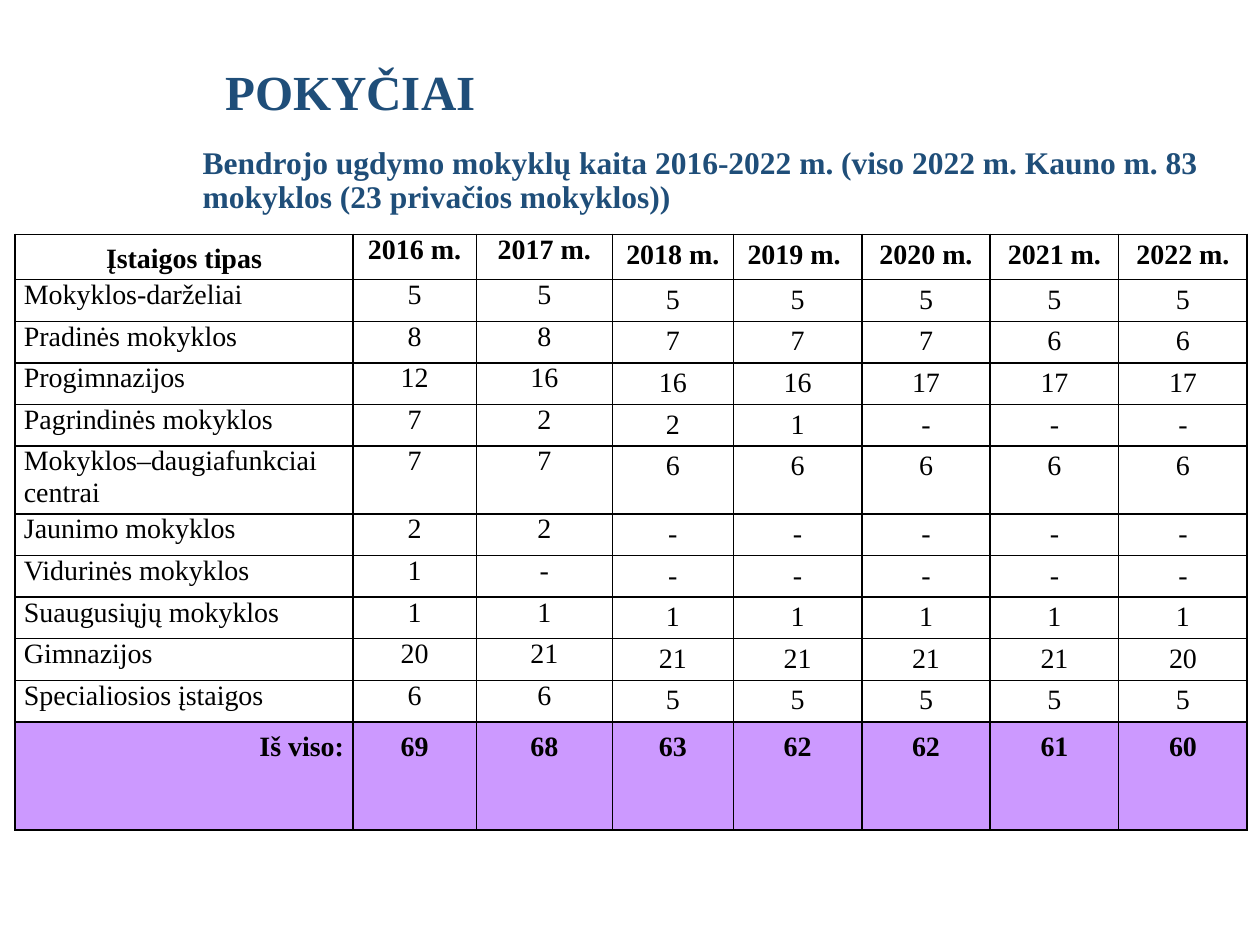
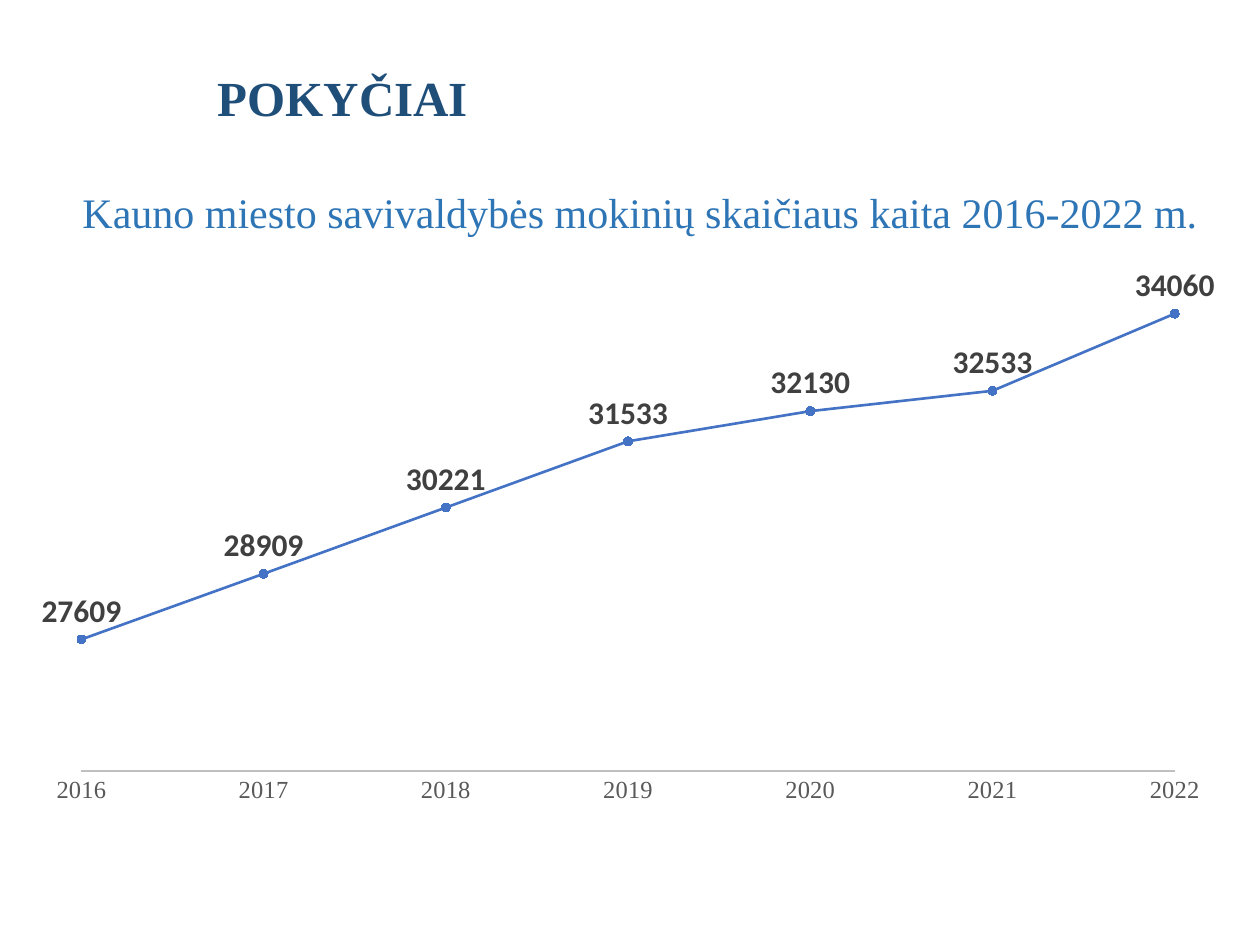
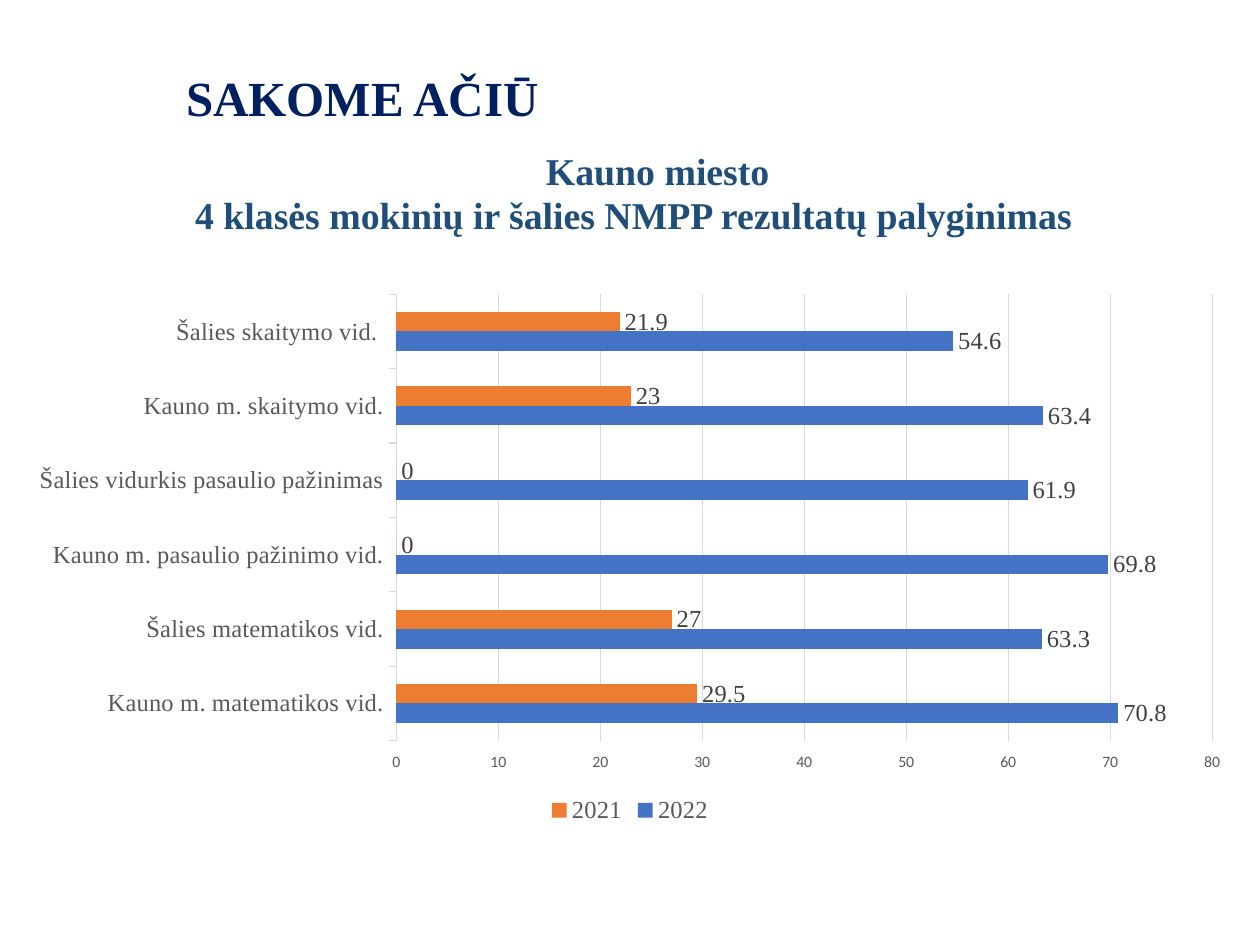
from lxml import etree
from pptx import Presentation
from pptx.chart.data import CategoryChartData, XyChartData
from pptx.chart.datalabel import DataLabels
from pptx.dml.color import RGBColor
from pptx.enum.chart import (XL_CHART_TYPE, XL_LABEL_POSITION, XL_LEGEND_POSITION,
                             XL_MARKER_STYLE, XL_TICK_MARK)
from pptx.enum.text import MSO_ANCHOR, PP_ALIGN
from pptx.oxml import parse_xml
from pptx.oxml.ns import nsdecls, qn
from pptx.util import Inches, Pt

LEFT, CENTER, RIGHT = PP_ALIGN.LEFT, PP_ALIGN.CENTER, PP_ALIGN.RIGHT
TOP, MIDDLE = MSO_ANCHOR.TOP, MSO_ANCHOR.MIDDLE
NO_TICK, TICK_OUT = XL_TICK_MARK.NONE, XL_TICK_MARK.OUTSIDE
ABOVE, OUTSIDE_END = XL_LABEL_POSITION.ABOVE, XL_LABEL_POSITION.OUTSIDE_END

# Shared look
SERIF, SANS = "Times New Roman", "Calibri"
NAVY, DEEP, SKY = "1F4E79", "002060", "2E75B6"
BLACK, DARK, GREY, SILVER, PALE = "000000", "404040", "595959", "BFBFBF", "D9D9D9"
BLUE, ORANGE, LILAC = "4472C4", "ED7D31", "CC99FF"
HEADING = {"name": SERIF, "size": Pt(28), "bold": True, "color": NAVY}
AXIS = {"name": SERIF, "size": Pt(14), "color": GREY}
rgb = RGBColor.from_string


def style(font, fmt):
    for key, value in fmt.items():
        if key == "color":
            font.color.rgb = rgb(value)
        else:
            setattr(font, key, value)


def add_text(s, lines, box, fmt, align=LEFT, anchor=TOP, spacing=1.0):
    tf = s.shapes.add_textbox(*[Inches(v) for v in box]).text_frame
    tf.word_wrap = True
    tf.vertical_anchor = anchor
    for i, line in enumerate(lines):
        p = tf.paragraphs[0] if i == 0 else tf.add_paragraph()
        p.alignment = align
        p.line_spacing = spacing
        r = p.add_run()
        r.text = line
        style(r.font, fmt)
    return tf


prs = Presentation()
prs.slide_width, prs.slide_height = Inches(10), Inches(7.5)
blank = prs.slide_layouts[6]

# Slide 1: table of schools
s = prs.slides.add_slide(blank)
add_text(s, ["Bendrojo ugdymo mokyklų kaita 2016-2022 m. (viso 2022 m. Kauno m. 83 "
             "mokyklos (23 privačios mokyklos))"],
         (1.51, 1.08, 8.35, 0.71), HEADING | {"size": Pt(18)}, anchor=MIDDLE, spacing=0.9)
add_text(s, ["POKYČIAI"], (1.69, 0.44, 4.02, 0.57), HEADING)

rows = [
    ["Įstaigos tipas", "2016 m.", "2017 m.", "2018 m.", "2019 m. ", "2020 m.", "2021 m.", "2022 m."],
    ["Mokyklos-darželiai", 5, 5, 5, 5, 5, 5, 5],
    ["Pradinės mokyklos", 8, 8, 7, 7, 7, 6, 6],
    ["Progimnazijos", 12, 16, 16, 16, 17, 17, 17],
    ["Pagrindinės mokyklos", 7, 2, 2, 1, "-", "-", "-"],
    ["Mokyklos–daugiafunkciai centrai", 7, 7, 6, 6, 6, 6, 6],
    ["Jaunimo mokyklos", 2, 2, "-", "-", "-", "-", "-"],
    ["Vidurinės mokyklos", 1, "-", "-", "-", "-", "-", "-"],
    ["Suaugusiųjų mokyklos", 1, 1, 1, 1, 1, 1, 1],
    ["Gimnazijos", 20, 21, 21, 21, 21, 21, 20],
    ["Specialiosios įstaigos", 6, 6, 5, 5, 5, 5, 5],
    ["Iš viso:", 69, 68, 63, 62, 62, 61, 60],
]
col_widths = [2.68, 0.98, 1.08, 0.96] + [1.02] * 4
row_heights = [0.36] + [0.33] * 4 + [0.54] + [0.33] * 5 + [0.86]
last = len(rows) - 1
table = s.shapes.add_table(len(rows), len(col_widths), Inches(0.12), Inches(1.86),
                           Inches(sum(col_widths)), Inches(sum(row_heights))).table
table.first_row = table.horz_banding = False
for column, width in zip(table.columns, col_widths):
    column.width = Inches(width)
for row, height in zip(table.rows, row_heights):
    row.height = Inches(height)

for i, row in enumerate(rows):
    for j, value in enumerate(row):
        cell = table.cell(i, j)
        cell.margin_left = cell.margin_right = Inches(0.07)
        cell.margin_top = cell.margin_bottom = 0
        if i == last:
            cell.fill.solid()
            cell.fill.fore_color.rgb = rgb(LILAC)
        else:
            cell.fill.background()
        p = cell.text_frame.paragraphs[0]
        if j > 0 or i == 0:
            p.alignment = CENTER
        else:
            p.alignment = RIGHT if i == last else LEFT
        if i == last or (i == 0 and j == 0):
            p.line_spacing = 1.3
        else:
            p.line_spacing = 1.15 if j > 2 else 1.0
        r = p.add_run()
        r.text = str(value)
        style(r.font, {"name": SERIF, "size": Pt(16), "bold": i in (0, last), "color": BLACK})
        # Cell borders
        tcPr = cell._tc.get_or_add_tcPr()
        for k, side in enumerate(("lnL", "lnR", "lnT", "lnB")):
            tcPr.insert(k, parse_xml(
                f'<a:{side} {nsdecls("a")} w="{Pt(1)}"><a:solidFill>'
                f'<a:srgbClr val="{BLACK}"/></a:solidFill></a:{side}>'))

# Slide 2: number of pupils
s = prs.slides.add_slide(blank)
add_text(s, ["Kauno miesto savivaldybės mokinių skaičiaus kaita 2016-2022 m."],
         (0.28, 1.43, 9.6, 0.5), {"name": SERIF, "size": Pt(24), "color": SKY}, CENTER, MIDDLE)
add_text(s, ["POKYČIAI"], (1.63, 0.49, 4.32, 0.57), HEADING)

data = XyChartData()
pupils = data.add_series("Series 1")
for year, count in enumerate([27609, 28909, 30221, 31533, 32130, 32533, 34060], 2016):
    pupils.add_data_point(year, count)
chart = s.shapes.add_chart(XL_CHART_TYPE.XY_SCATTER_LINES, Inches(0.12), Inches(1.94),
                           Inches(9.75), Inches(4.57), data).chart
style(chart.font, {"name": SANS, "size": Pt(10), "color": BLACK})
chart.has_title = chart.has_legend = False

years = chart.category_axis
years.minimum_scale, years.maximum_scale, years.major_unit = 2016, 2022, 1
years.has_major_gridlines = False
years.major_tick_mark = years.minor_tick_mark = NO_TICK
years.format.line.color.rgb = rgb(SILVER)
years.format.line.width = Pt(0.75)
style(years.tick_labels.font, AXIS)

counts = chart.value_axis
counts.minimum_scale, counts.maximum_scale = 25000, 35000
counts.has_major_gridlines = False
counts.visible = False

ser = chart.plots[0].series[0]
ser.smooth = False
ser.format.line.color.rgb = rgb(BLUE)
ser.format.line.width = Pt(1.5)
ser.marker.style, ser.marker.size = XL_MARKER_STYLE.CIRCLE, 5
ser.marker.format.fill.solid()
ser.marker.format.fill.fore_color.rgb = rgb(BLUE)
ser.marker.format.line.color.rgb = rgb(BLUE)
labels = DataLabels(ser._element.get_or_add_dLbls())
labels.show_value = True
labels.position = ABOVE
style(labels.font, {"name": SANS, "size": Pt(18), "bold": True, "color": DARK})

# Fixed plot area
plot_area = chart._chartSpace.chart.plotArea
for old in plot_area.findall(qn("c:layout")):
    plot_area.remove(old)
layout = etree.Element(qn("c:layout"))
manual = etree.SubElement(layout, qn("c:manualLayout"))
for tag, value in (("layoutTarget", "inner"), ("xMode", "edge"), ("yMode", "edge"),
                   ("x", 0.054), ("y", 0.038), ("w", 0.89), ("h", 0.877)):
    etree.SubElement(manual, qn("c:" + tag)).set("val", str(value))
plot_area.insert(0, layout)

# Slide 3: test results
s = prs.slides.add_slide(blank)
tf = add_text(s, ["Kauno miesto", "4 klasės mokinių ir šalies NMPP rezultatų palyginimas"],
              (0.72, 1.11, 8.62, 0.86), HEADING | {"size": Pt(21.6)}, CENTER, MIDDLE, 0.97)
tf.paragraphs[0]._p.get_or_add_pPr().set("marL", str(Inches(0.38)))
add_text(s, ["SAKOME AČIŪ"], (1.38, 0.49, 4.25, 0.57), HEADING | {"color": DEEP})

data = CategoryChartData()
data.categories = ["Kauno m. matematikos vid.", "Šalies matematikos vid.",
                   "Kauno m. pasaulio pažinimo vid.", "Šalies vidurkis pasaulio pažinimas",
                   "Kauno m. skaitymo vid.", "Šalies skaitymo vid. "]
data.add_series("2022", [70.8, 63.3, 69.8, 61.9, 63.4, 54.6])
data.add_series("2021", [29.5, 27, 0, 0, 23, 21.9])
chart = s.shapes.add_chart(XL_CHART_TYPE.BAR_CLUSTERED, Inches(0.12), Inches(2.25),
                           Inches(9.76), Inches(4.33), data).chart
style(chart.font, {"name": SANS, "size": Pt(10), "color": BLACK})
chart.has_title = False
chart.has_legend = True
chart.legend.position = XL_LEGEND_POSITION.BOTTOM
chart.legend.include_in_layout = False
style(chart.legend.font, AXIS)

tests = chart.category_axis
tests.major_tick_mark = TICK_OUT
tests.format.line.color.rgb = rgb(PALE)
tests.format.line.width = Pt(0.75)
style(tests.tick_labels.font, AXIS)

scores = chart.value_axis
scores.minimum_scale, scores.maximum_scale, scores.major_unit = 0, 80, 10
scores.major_tick_mark = TICK_OUT
scores.format.line.fill.background()
scores.major_gridlines.format.line.color.rgb = rgb(PALE)
scores.major_gridlines.format.line.width = Pt(0.75)
style(scores.tick_labels.font, {"name": SANS, "size": Pt(9), "color": GREY})

plot = chart.plots[0]
plot.gap_width = 182
plot.vary_by_categories = False
for ser, color in zip(plot.series, (BLUE, ORANGE)):
    ser.format.fill.solid()
    ser.format.fill.fore_color.rgb = rgb(color)
    labels = ser.data_labels
    labels.show_value = True
    labels.position = OUTSIDE_END
    style(labels.font, AXIS | {"color": DARK})

prs.save("out.pptx")
